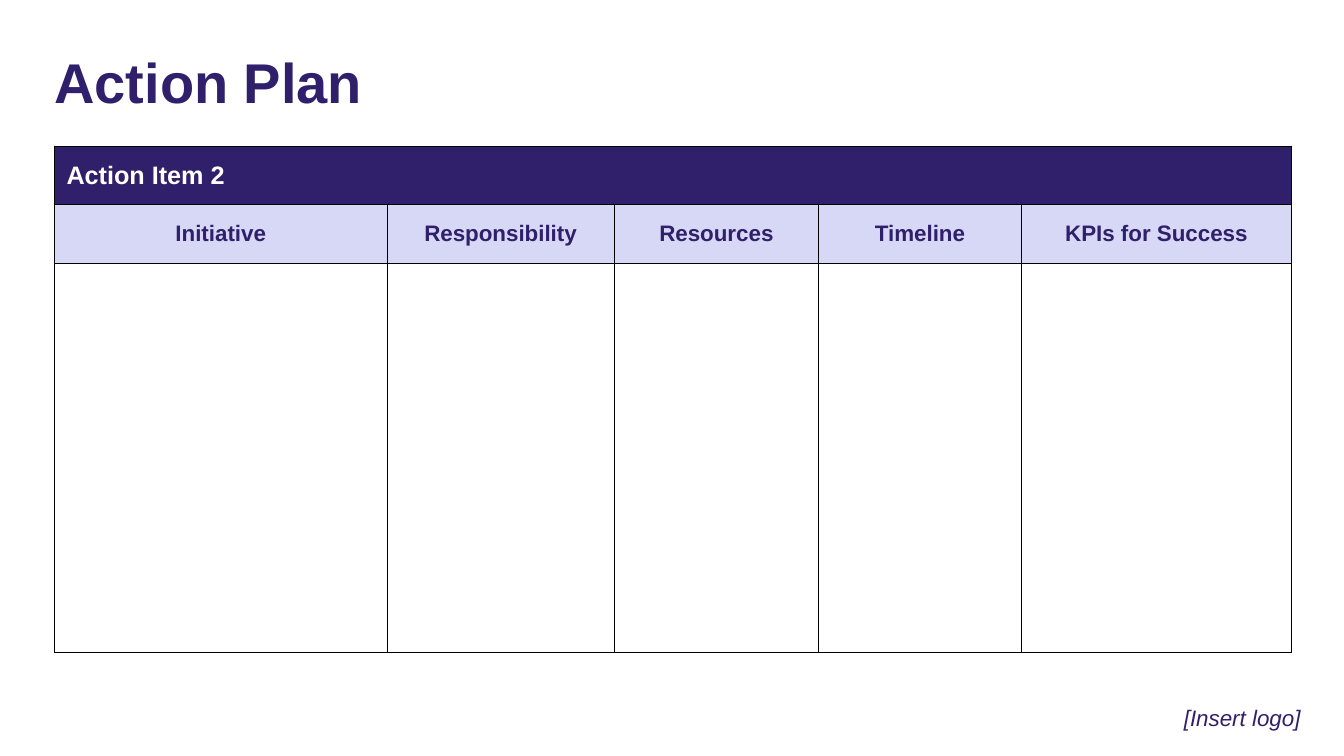
from lxml import etree
from pptx import Presentation
from pptx.dml.color import RGBColor
from pptx.enum.text import MSO_ANCHOR, PP_ALIGN
from pptx.oxml.ns import qn
from pptx.util import Inches, Pt

TOP, MIDDLE = MSO_ANCHOR.TOP, MSO_ANCHOR.MIDDLE
LEFT, CENTER = PP_ALIGN.LEFT, PP_ALIGN.CENTER
INDIGO = RGBColor(0x30, 0x20, 0x6B)
LAVENDER = RGBColor(0xD7, 0xD7, 0xF6)
WHITE = RGBColor(0xFF, 0xFF, 0xFF)
BLACK = RGBColor(0, 0, 0)

FONT = "Arial"
HEADINGS = ["Initiative", "Responsibility", "Resources", "Timeline", "KPIs for Success"]
COLUMNS = [3.3, 2.25, 2.03, 2.01, 2.68]
ROWS = [0.58, 0.58, 3.86]


def add_run(p, text, size, color=INDIGO, bold=False, italic=False):
    r = p.add_run()
    r.text = text
    r.font.name = FONT
    r.font.size = Pt(size)
    r.font.color.rgb = color
    r.font.bold = bold
    r.font.italic = italic


def add_line_box(s, box, anchor, align):
    tf = s.shapes.add_textbox(*map(Inches, box)).text_frame
    tf.word_wrap = True
    tf.vertical_anchor = anchor
    tf.margin_left = tf.margin_top = tf.margin_right = tf.margin_bottom = 0
    p = tf.paragraphs[0]
    p.alignment = align
    p.line_spacing = 0.9
    return p


def add_title(s, box):
    add_run(add_line_box(s, box, MIDDLE, LEFT), "Action Plan", 40, bold=True)


def add_logo_note(s, box):
    p = add_line_box(s, box, TOP, CENTER)
    add_run(p, "[Insert logo]", 16, italic=True)
    add_run(p, " ", 41)


def style_cell(cell, color):
    cell.vertical_anchor = MIDDLE
    cell.margin_left = cell.margin_right = Inches(0.12)
    cell.margin_top = cell.margin_bottom = Inches(0.08)
    cell.fill.solid()
    cell.fill.fore_color.rgb = color
    tc_pr = cell._tc.get_or_add_tcPr()
    for i, side in enumerate(("a:lnL", "a:lnR", "a:lnT", "a:lnB")):
        ln = etree.Element(qn(side), w=str(Pt(0.75)))
        fill = etree.SubElement(ln, qn("a:solidFill"))
        etree.SubElement(fill, qn("a:srgbClr"), val=str(BLACK))
        tc_pr.insert(i, ln)


def add_plan_table(s, left, top):
    size = map(Inches, (left, top, sum(COLUMNS), sum(ROWS)))
    table = s.shapes.add_table(len(ROWS), len(COLUMNS), *size).table
    for column, width in zip(table.columns, COLUMNS):
        column.width = Inches(width)
    for row, height, color in zip(table.rows, ROWS, (INDIGO, LAVENDER, WHITE)):
        row.height = Inches(height)
        for cell in row.cells:
            style_cell(cell, color)

    banner = table.cell(0, 0)
    banner.merge(table.cell(0, len(COLUMNS) - 1))
    add_run(banner.text_frame.paragraphs[0], "Action Item 2", 18, WHITE, bold=True)
    for cell, heading in zip(table.rows[1].cells, HEADINGS):
        p = cell.text_frame.paragraphs[0]
        p.alignment = CENTER
        add_run(p, heading, 16, bold=True)


def main():
    prs = Presentation()
    prs.slide_width, prs.slide_height = Inches(13.33), Inches(7.5)
    s = prs.slides.add_slide(prs.slide_layouts[6])
    add_title(s, (0.54, 0.52, sum(COLUMNS), 0.66))
    add_logo_note(s, (11.63, 6.72, 1.54, 0.44))
    add_plan_table(s, 0.54, 1.45)
    prs.save("out.pptx")


if __name__ == "__main__":
    main()
